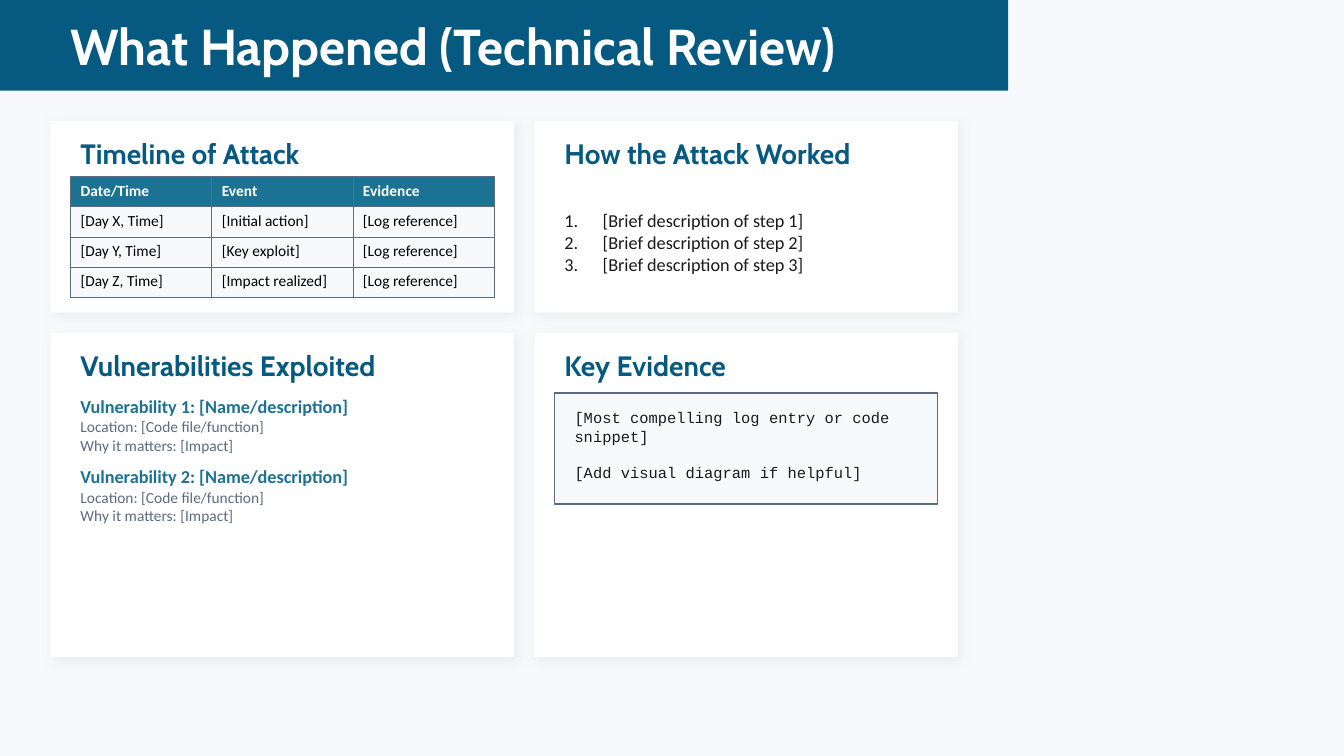
import pptx
import pptx.util
import pptx.dml.color
import pptx.enum.shapes
import pptx.enum.text
import pptx.oxml
import pptx.oxml.ns

COLORS = {
    "navy": "065A82", "teal": "1C7293", "slate": "5A6C7D", "ink": "1A1A1A",
    "black": "000000", "white": "FFFFFF", "mist": "F8F9FA", "shade": "DDDDDD",
}
GRID = pptx.util.Inches(0.1)
NAMESPACE = pptx.oxml.ns.nsdecls("a")

deck = pptx.Presentation()
deck.slide_width = pptx.util.Inches(13.33)
deck.slide_height = pptx.util.Inches(7.5)
slide = deck.slides.add_slide(deck.slide_layouts[6])


def rgb(name):
    return pptx.dml.color.RGBColor.from_string(COLORS[name])


def write(frame, lines, size, font, color, bold=False, anchor="MIDDLE", gap=0, numbered=False):
    frame.word_wrap = True
    frame.vertical_anchor = pptx.enum.text.MSO_ANCHOR[anchor]
    for index, line in enumerate(lines):
        paragraph = frame.paragraphs[0] if index == 0 else frame.add_paragraph()
        if index and gap:
            paragraph.space_before = pptx.util.Pt(gap)
        if numbered:
            properties = paragraph._p.get_or_add_pPr()
            properties.set("marL", str(pptx.util.Inches(0.38)))
            properties.set("indent", str(-pptx.util.Inches(0.38)))
            properties.append(pptx.oxml.parse_xml(f'<a:buAutoNum {NAMESPACE} type="arabicPeriod"/>'))
        run = paragraph.add_run()
        run.text = line
        run.font.size = pptx.util.Pt(size)
        run.font.name = font
        run.font.bold = bold
        run.font.color.rgb = rgb(color)


slide.background.fill.solid()
slide.background.fill.fore_color.rgb = rgb("mist")

left, right = (5, 46), (53, 42)
upper, lower = (12, 19), (33, 32.2)
cards = [
    (left, upper, "Timeline of Attack"),
    (right, upper, "How the Attack Worked"),
    (left, lower, "Vulnerabilities Exploited"),
    (right, lower, "Key Evidence"),
]
panels = [(0, 0, 100, 9, "navy", None)]
panels += [(x, y, width, height, "white", "shadow") for (x, width), (y, height), heading in cards]
panels += [(55, 39, 38, 11, "mist", "outline")]

for x, y, width, height, color, effect in panels:
    panel = slide.shapes.add_shape(
        pptx.enum.shapes.MSO_SHAPE.RECTANGLE,
        *(round(length * GRID) for length in (x, y, width, height)))
    panel.shadow.inherit = False
    panel.fill.solid()
    panel.fill.fore_color.rgb = rgb(color)
    if effect == "outline":
        panel.line.color.rgb = rgb("slate")
        panel.line.width = pptx.util.Pt(1)
    else:
        panel.line.fill.background()
    if effect == "shadow":
        effects = panel._element.spPr.find(pptx.oxml.ns.qn("a:effectLst"))
        effects.append(pptx.oxml.parse_xml(
            f'<a:outerShdw {NAMESPACE} blurRad="{pptx.util.Pt(8)}" dist="{pptx.util.Pt(3)}" '
            f'dir="2700000" algn="bl" rotWithShape="0"><a:srgbClr val="{COLORS["shade"]}">'
            '<a:alpha val="50000"/></a:srgbClr></a:outerShdw>'))

heading_style = dict(size=20, font="Cabin", color="navy", bold=True)
texts = [((6, 2, 88, 5), ["What Happened (Technical Review)"],
          dict(size=36, font="Cabin", color="white", bold=True))]
for (x, width), (y, height), heading in cards:
    texts.append(((x + 2, y + 1.5, width - 4, 3.5), [heading], heading_style))
texts.append(((55, 18, 38, 12), [f"[Brief description of step {step}]" for step in (1, 2, 3)],
              dict(size=13, font="Calibri", color="ink", numbered=True)))
for number in (1, 2):
    top = 32 + 7 * number
    texts.append(((7, top, 42, 2.5), [f"Vulnerability {number}: [Name/description]"],
                  dict(size=13, font="Calibri", color="teal", bold=True)))
    texts.append(((7, top + 2.5, 42, 3.5),
                  ["Location: [Code file/function]", "Why it matters: [Impact]"],
                  dict(size=11, font="Calibri", color="slate")))
texts.append(((56, 40, 36, 9),
              ["[Most compelling log entry or code snippet]", "[Add visual diagram if helpful]"],
              dict(size=11, font="Courier New", color="ink", anchor="TOP", gap=12.5)))

for place, lines, style in texts:
    box = slide.shapes.add_textbox(*(round(length * GRID) for length in place))
    write(box.text_frame, lines, **style)

events = [
    ("Date/Time", "Event", "Evidence"),
    ("[Day X, Time]", "[Initial action]", "[Log reference]"),
    ("[Day Y, Time]", "[Key exploit]", "[Log reference]"),
    ("[Day Z, Time]", "[Impact realized]", "[Log reference]"),
]
timeline = slide.shapes.add_table(
    len(events), 3, 7 * GRID, round(17.5 * GRID), 42 * GRID, 12 * GRID).table
for row, event in enumerate(events):
    header = row == 0
    for column, entry in enumerate(event):
        cell = timeline.cell(row, column)
        write(cell.text_frame, [entry], 11, "Calibri", "white" if header else "black", header, "TOP")
        cell.fill.solid()
        cell.fill.fore_color.rgb = rgb("teal" if header else "mist")
        for position, side in enumerate(("lnL", "lnR", "lnT", "lnB")):
            cell._tc.get_or_add_tcPr().insert(position, pptx.oxml.parse_xml(
                f'<a:{side} {NAMESPACE} w="{pptx.util.Pt(0.5)}"><a:solidFill>'
                f'<a:srgbClr val="{COLORS["slate"]}"/></a:solidFill></a:{side}>'))

deck.save("out.pptx")
